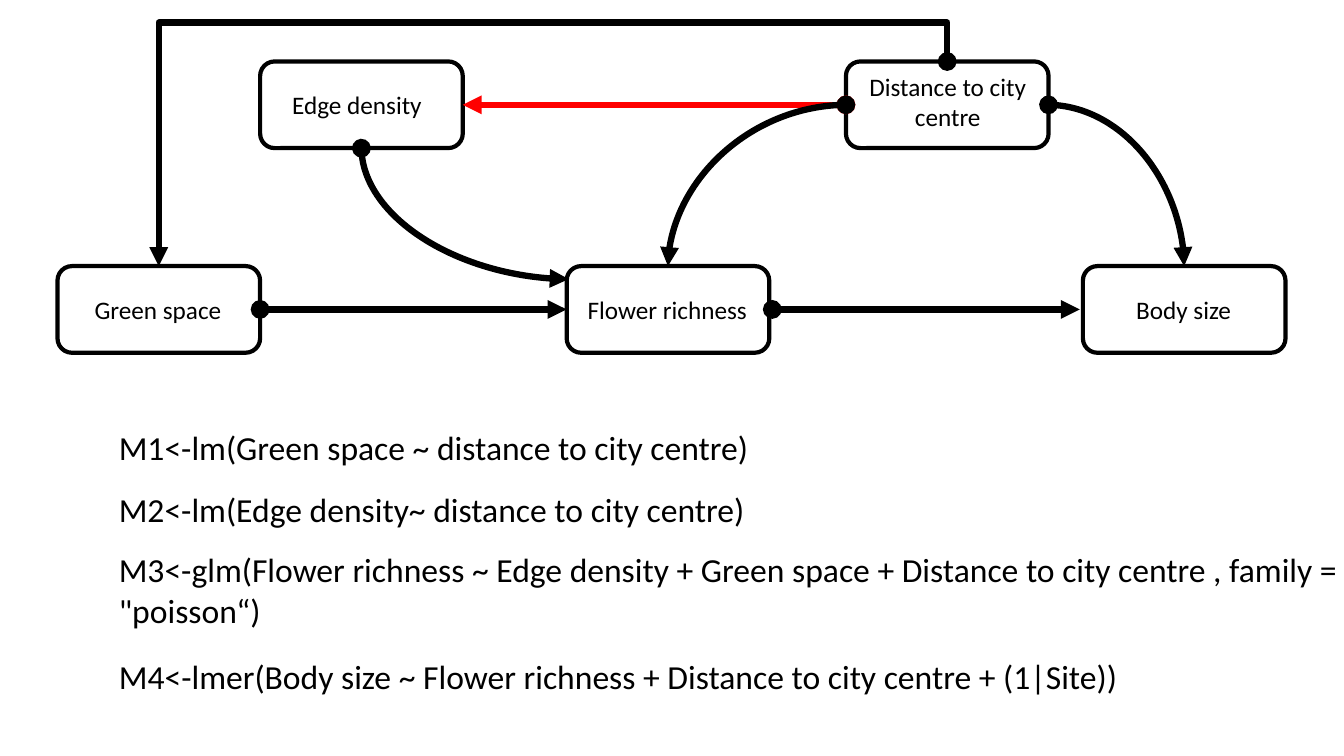
import pptx
import pptx.util
import pptx.dml.color
import pptx.enum.shapes
import pptx.enum.text
import pptx.oxml.ns
import lxml.etree

Inches = pptx.util.Inches
qn = pptx.oxml.ns.qn
SHAPES = pptx.enum.shapes.MSO_SHAPE
LINKS = pptx.enum.shapes.MSO_CONNECTOR
ALIGN = pptx.enum.text.PP_ALIGN

COLOURS = {"ink": "000000", "highlight": "FF0000"}
NODE_WIDTH, NODE_HEIGHT = 2.01, 0.86
UPPER, LOWER = 0.39, 2.42

NODES = {
    "Distance to city centre": (7.82, UPPER, (0.09, 0.05, 1.84, 0.71), True),
    "Edge density": (2.01, UPPER, (0.22, 0.23, 1.5, 0.4), False),
    "Flower richness": (5.05, LOWER, (0.11, 0.23, 1.8, 0.4), False),
    "Green space": (0, LOWER, (0.27, 0.23, 1.47, 0.4), False),
    "Body size": (10.17, LOWER, (0.43, 0.23, 1.15, 0.4), False),
}

MODELS = [
    ("M1<-lm(Green space ~ distance to city centre)", 0, 7.03, 0.91),
    ("M2<-lm(Edge density~ distance to city centre)", 0.61, 7.66, 0.5),
    ("M3<-glm(Flower richness ~ Edge density + Green space + "
     "Distance to city centre , family = \"poisson“)", 1.21, 12.8, 0.91),
    ("M4<-lmer(Body size ~ Flower richness + Distance to city centre + (1|Site))",
     2.27, 11.42, 0.5),
]


def colour(name):
    """Return the named colour."""
    return pptx.dml.color.RGBColor.from_string(COLOURS[name])


def add_text(page, text, box, size=18, wrap=True, align=ALIGN.LEFT):
    """Write one paragraph in a text box."""
    frame = page.shapes.add_textbox(*map(Inches, box)).text_frame
    frame.word_wrap = wrap
    frame.auto_size = pptx.enum.text.MSO_AUTO_SIZE.SHAPE_TO_FIT_TEXT
    para = frame.paragraphs[0]
    para.alignment = align
    span = para.add_run()
    span.text = text
    span.font.size = pptx.util.Pt(size)
    span.font.name = "Calibri"
    span.font.color.rgb = colour("ink")


def add_node(page, left, top):
    """Draw one rounded outline."""
    node = page.shapes.add_shape(
        SHAPES.ROUNDED_RECTANGLE,
        *map(Inches, (left, top, NODE_WIDTH, NODE_HEIGHT)))
    node.shadow.inherit = False
    node.fill.background()
    node.line.color.rgb = colour("ink")
    node.line.width = pptx.util.Pt(3)


def add_link(page, begin, end, kind=LINKS.STRAIGHT, preset=None,
             upright=False, bend=None, shade="ink"):
    """Draw an arrow with a dot at its start; upright ones leave vertically."""
    if upright:
        middle_x, middle_y = ((a + b) / 2 for a, b in zip(begin, end))
        half_x, half_y = (begin[1] - end[1]) / 2, (end[0] - begin[0]) / 2
        begin = middle_x - half_x, middle_y - half_y
        end = middle_x + half_x, middle_y + half_y
    link = page.shapes.add_connector(kind, *map(Inches, (*begin, *end)))
    link.line.color.rgb = colour(shade)
    link.line.width = pptx.util.Pt(4.5)
    properties = link._element.spPr
    if upright:
        properties.find(qn("a:xfrm")).set("rot", str(270 * 60000))
    geometry = properties.find(qn("a:prstGeom"))
    if preset:
        geometry.set("prst", preset)
    if bend is not None:
        lxml.etree.SubElement(geometry.find(qn("a:avLst")), qn("a:gd"),
                              name="adj1", fmla=f"val {round(bend * 100000)}")
    outline = properties.find(qn("a:ln"))
    lxml.etree.SubElement(outline, qn("a:headEnd"), type="oval")
    lxml.etree.SubElement(outline, qn("a:tailEnd"), type="triangle")
    lxml.etree.SubElement(properties, qn("a:effectLst"))


def add_path_diagram(page, left, top):
    """Draw the variables, the arrows between them and their labels."""
    def at(name, across, down, gap=0):
        x, y = NODES[name][:2]
        return left + x + across * NODE_WIDTH + gap, top + y + down * NODE_HEIGHT

    for name in NODES:
        add_node(page, *at(name, 0, 0))
    distance, edge, flower, green, body = NODES
    curve = {"kind": LINKS.CURVE, "preset": "curvedConnector2"}
    add_link(page, at(green, 1, 0.5), at(flower, 0, 0.5))
    add_link(page, at(flower, 1, 0.5, 0.03), at(body, 0, 0.5, -0.03))
    add_link(page, at(distance, 0, 0.5), at(edge, 1, 0.5), shade="highlight")
    add_link(page, at(distance, 0.5, 0), at(green, 0.5, 0),
             kind=LINKS.ELBOW, upright=True, bend=-0.19)
    add_link(page, at(edge, 0.5, 1), at(flower, 0, 0.15, 0.02), upright=True, **curve)
    add_link(page, at(distance, 1, 0.5), at(body, 0.5, 0), **curve)
    add_link(page, at(distance, 0, 0.5), at(flower, 0.5, 0), **curve)
    for name, (x, y, label, wrap) in NODES.items():
        box = left + x + label[0], top + y + label[1], *label[2:]
        add_text(page, name, box, wrap=wrap,
                 align=ALIGN.CENTER if wrap else ALIGN.LEFT)


def add_models(page, left, top):
    """List the model formulas."""
    for formula, offset, width, height in MODELS:
        add_text(page, formula, (left, top + offset, width, height), size=24)


def main():
    """Build the deck."""
    deck = pptx.Presentation()
    deck.slide_width, deck.slide_height = Inches(13.33), Inches(7.5)
    page = deck.slides.add_slide(deck.slide_layouts[6])
    add_path_diagram(page, 0.57, 0.22)
    add_models(page, 1.08, 4.19)
    deck.save("out.pptx")


if __name__ == "__main__":
    main()
